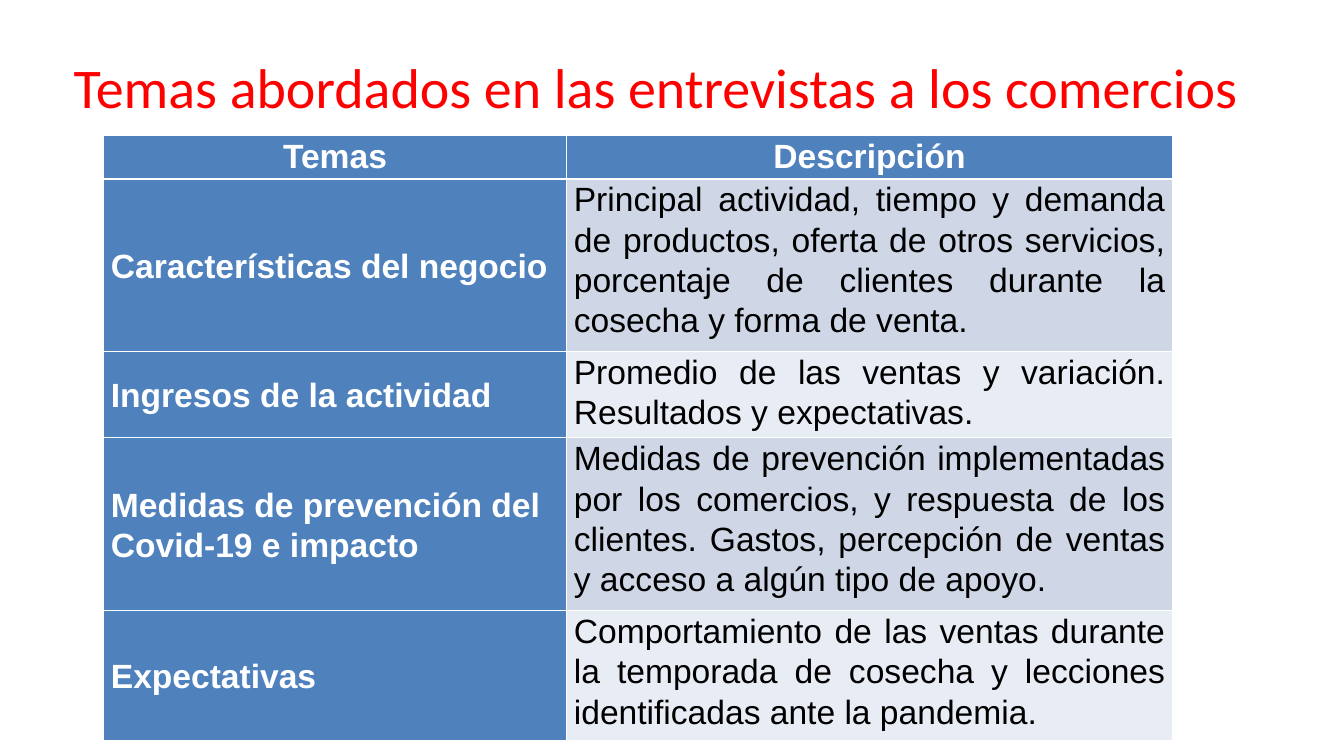
from lxml.etree import SubElement
from pptx import Presentation
from pptx.dml.color import RGBColor
from pptx.enum.text import MSO_ANCHOR as Anchor, PP_ALIGN as Align
from pptx.oxml.ns import qn
from pptx.util import Inches, Pt

TITLE = "Temas abordados en las entrevistas a los comercios"
HEADS = ("Temas", "Descripción")
TOPICS = [  # topic, description, row height
    ("Características del negocio",
     "Principal actividad, tiempo y demanda de productos, oferta de otros "
     "servicios, porcentaje de clientes durante la cosecha y forma de venta.", 2.57),
    ("Ingresos de la actividad",
     "Promedio de las ventas y variación. Resultados y expectativas.", 1.28),
    ("Medidas de prevención del Covid-19 e impacto",
     "Medidas de prevención implementadas por los comercios, y respuesta de los "
     "clientes. Gastos, percepción de ventas y acceso a algún tipo de apoyo.", 2.57),
    ("Expectativas",
     "Comportamiento de las ventas durante la temporada de cosecha y lecciones "
     "identificadas ante la pandemia.", 1.93),
]
WIDTHS = (6.89, 9.02)
HEAD_H = 0.64

RED = RGBColor(0xFF, 0x00, 0x00)
WHITE = RGBColor(0xFF, 0xFF, 0xFF)
BLACK = RGBColor(0x00, 0x00, 0x00)
BLUE = RGBColor(0x4F, 0x81, 0xBD)
BANDS = (RGBColor(0xCF, 0xD7, 0xE7), RGBColor(0xE8, 0xEC, 0xF4))


def style(para, font, size, color, align, bold=False):
    para.alignment = align
    para.line_spacing = 1.07
    para.font.name = font
    para.font.size = Pt(size)
    para.font.bold = bold
    para.font.color.rgb = color


def add_borders(cell, bottom):
    """Draw white cell edges; call before the fill is set, as XML order matters."""
    props = cell._tc.get_or_add_tcPr()
    for side, width in (("L", 1), ("R", 1), ("T", 1), ("B", bottom)):
        line = SubElement(props, qn(f"a:ln{side}"), w=str(Pt(width)))
        fill = SubElement(line, qn("a:solidFill"))
        SubElement(fill, qn("a:srgbClr"), val=str(WHITE))


def fill_cell(cell, text, fill, color, align, anchor, bold, bottom=1):
    cell.margin_left = cell.margin_right = Inches(0.11)
    cell.margin_top = cell.margin_bottom = 0
    cell.vertical_anchor = anchor
    add_borders(cell, bottom)
    cell.fill.solid()
    cell.fill.fore_color.rgb = fill
    cell.text = text
    style(cell.text_frame.paragraphs[0], "Arial", 36, color, align, bold)


def add_title(slide):
    box = slide.shapes.add_textbox(Inches(0.86), Inches(0.16), Inches(17.79), Inches(2.17))
    frame = box.text_frame
    frame.word_wrap = True
    frame.vertical_anchor = Anchor.MIDDLE
    para = frame.paragraphs[0]
    para.text = TITLE
    style(para, "Calibri", 60, RED, Align.CENTER)
    para.space_after = Pt(12)


def add_topics(slide):
    heights = [HEAD_H] + [height for _, _, height in TOPICS]
    table = slide.shapes.add_table(
        len(heights), len(WIDTHS), Inches(1.54), Inches(2.02),
        Inches(sum(WIDTHS)), Inches(sum(heights))).table
    for col, width in zip(table.columns, WIDTHS):
        col.width = Inches(width)
    for row, height in zip(table.rows, heights):
        row.height = Inches(height)
    for col, head in enumerate(HEADS):
        fill_cell(table.cell(0, col), head, BLUE, WHITE, Align.CENTER, Anchor.TOP, True, 3)
    for row, (topic, about, _) in enumerate(TOPICS, 1):
        fill_cell(table.cell(row, 0), topic, BLUE, WHITE, Align.LEFT, Anchor.MIDDLE, True)
        fill_cell(table.cell(row, 1), about, BANDS[(row - 1) % 2], BLACK,
                  Align.JUSTIFY, Anchor.TOP, False)


def main():
    deck = Presentation()
    deck.slide_width, deck.slide_height = Inches(20), Inches(11.25)
    slide = deck.slides.add_slide(deck.slide_layouts[6])
    add_title(slide)
    add_topics(slide)
    deck.save("out.pptx")


if __name__ == "__main__":
    main()
